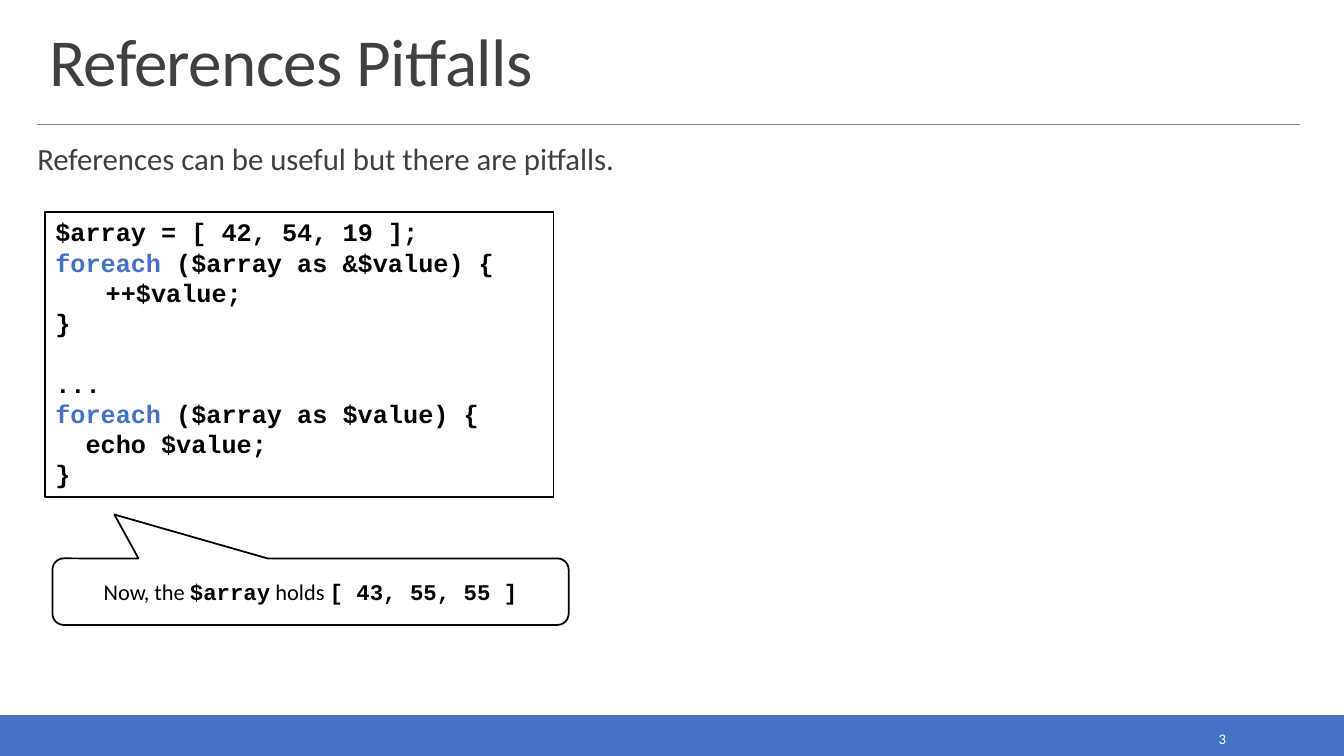
from dataclasses import dataclass

import pptx
import pptx.dml.color
import pptx.enum.shapes
import pptx.enum.text
import pptx.oxml.ns
import pptx.util
from lxml import etree

Inches, Pt = pptx.util.Inches, pptx.util.Pt
Shape = pptx.enum.shapes.MSO_SHAPE
Align = pptx.enum.text.PP_ALIGN
Anchor = pptx.enum.text.MSO_ANCHOR

WIDTH, HEIGHT = 13.33, 7.5
COLOURS = {"blue": "4472C4", "ink": "000000", "grey": "404040",
           "rule": "808080", "white": "FFFFFF"}
SANS, MONO = "Calibri", "Courier New"
CODE_SIZE, CODE_LINE = 18, 21.6
CODE_CHARACTER = 0.15


@dataclass(frozen=True)
class Area:
    left: float
    top: float
    width: float
    height: float

    def lengths(self) -> tuple:
        return tuple(Inches(n) for n in (self.left, self.top, self.width, self.height))


@dataclass(frozen=True)
class Span:
    text: str
    size: float
    font: str = SANS
    colour: str = "ink"
    bold: bool = False


@dataclass(frozen=True)
class CodeLine:
    text: str
    keyword: str = ""
    indent: float = 0
    space_before: float = 0

    def spans(self) -> list[Span]:
        parts = [(self.keyword, "blue"), (self.text, "ink")]
        return [Span(text, CODE_SIZE, MONO, colour, True) for text, colour in parts if text]


CODE = [
    CodeLine("$array = [ 42, 54, 19 ];"),
    CodeLine(" ($array as &$value) {", keyword="foreach"),
    CodeLine("++$value;", indent=0.5),
    CodeLine("}"),
    CodeLine("...", space_before=CODE_LINE),
    CodeLine(" ($array as $value) {", keyword="foreach"),
    CodeLine("echo $value;", indent=2 * CODE_CHARACTER),
    CodeLine("}"),
]
RESULT = [
    Span("Now, the ", 16),
    Span("$array", 16, MONO, bold=True),
    Span(" holds ", 16),
    Span("[ 43, 55, 55 ]", 16, MONO, bold=True),
]


def rgb(name: str) -> pptx.dml.color.RGBColor:
    return pptx.dml.color.RGBColor.from_string(COLOURS[name])


def write(para, spans: list[Span], align=Align.LEFT) -> None:
    para.alignment = align
    for span in spans:
        run = para.add_run()
        run.text = span.text
        run.font.name, run.font.size = span.font, Pt(span.size)
        run.font.bold = span.bold
        run.font.color.rgb = rgb(span.colour)


def set_frame(shape, anchor=Anchor.TOP):
    frame = shape.text_frame
    frame.word_wrap = True
    frame.auto_size = pptx.enum.text.MSO_AUTO_SIZE.NONE
    frame.vertical_anchor = anchor
    return frame


def add_box(page, kind, area: Area, line: str, fill: str = ""):
    box = page.shapes.add_shape(kind, *area.lengths())
    box.shadow.inherit = False
    if fill:
        box.fill.solid()
        box.fill.fore_color.rgb = rgb(fill)
    else:
        box.fill.background()
    box.line.color.rgb = rgb(line)
    box.line.width = Pt(1.25)
    return box


def add_rule(page, left: float, right: float, top: float) -> None:
    rule = page.shapes.add_connector(
        pptx.enum.shapes.MSO_CONNECTOR.STRAIGHT,
        Inches(left), Inches(top), Inches(right), Inches(top))
    rule.line.color.rgb = rgb("rule")
    rule.line.width = Pt(0.5)
    etree.SubElement(rule._element.spPr, pptx.oxml.ns.qn("a:effectLst"))


def fill_placeholder(holder, area: Area, span: Span, anchor, line_spacing: float):
    holder.left, holder.top, holder.width, holder.height = area.lengths()
    frame = set_frame(holder, anchor)
    para = frame.paragraphs[0]
    para.line_spacing = line_spacing
    write(para, [span])
    return frame


def add_heading(page) -> None:
    title = fill_placeholder(page.shapes.title, Area(0.39, 0.2, 12.52, 0.84),
                             Span("References Pitfalls", 48, colour="grey"), Anchor.BOTTOM, 0.85)
    title.paragraphs[0].runs[0].font._element.set("spc", "-50")

    body = fill_placeholder(page.placeholders[1], Area(0.37, 1.39, 12.52, 0.47),
                            Span("References can be useful but there are pitfalls.", 22,
                                 colour="grey"), Anchor.TOP, 0.9)
    body.margin_left = body.margin_right = 0
    body.margin_top = body.margin_bottom = Inches(0.04)
    para = body.paragraphs[0]
    para.space_before, para.space_after = Pt(12), Pt(2)
    properties = para._element.get_or_add_pPr()
    properties.set("marL", "0")
    properties.set("indent", "0")
    etree.SubElement(properties, pptx.oxml.ns.qn("a:buNone"))


def add_code(page) -> None:
    box = add_box(page, Shape.RECTANGLE, Area(0.45, 2.1, 5.04, 2.83), "ink")
    frame = set_frame(box)
    for index, line in enumerate(CODE):
        para = frame.add_paragraph() if index else frame.paragraphs[0]
        write(para, line.spans())
        para.space_before = Pt(line.space_before)
        para._element.get_or_add_pPr().set("marL", str(Inches(line.indent)))


def add_result(page) -> None:
    callout = add_box(page, Shape.ROUNDED_RECTANGULAR_CALLOUT,
                      Area(0.52, 5.54, 5.12, 0.66), "ink", "white")
    for index, value in enumerate((-0.38, -1.16, 0.17)):
        callout.adjustments[index] = value
    write(set_frame(callout, Anchor.MIDDLE).paragraphs[0], RESULT, Align.CENTER)


def add_footer(page) -> None:
    add_box(page, Shape.RECTANGLE, Area(0, HEIGHT - 0.4, WIDTH, 0.4), "blue", "blue")
    number = page.shapes.add_textbox(*Area(10.83, 7.19, 1.43, 0.28).lengths())
    write(set_frame(number, Anchor.MIDDLE).paragraphs[0],
          [Span("3", 10.5, colour="white")], Align.RIGHT)


def main() -> None:
    deck = pptx.Presentation()
    deck.slide_width, deck.slide_height = Inches(WIDTH), Inches(HEIGHT)
    page = deck.slides.add_slide(deck.slide_layouts[1])
    add_footer(page)
    add_rule(page, 0.37, 12.89, 1.23)
    add_heading(page)
    add_code(page)
    add_result(page)
    deck.save("out.pptx")


if __name__ == "__main__":
    main()
